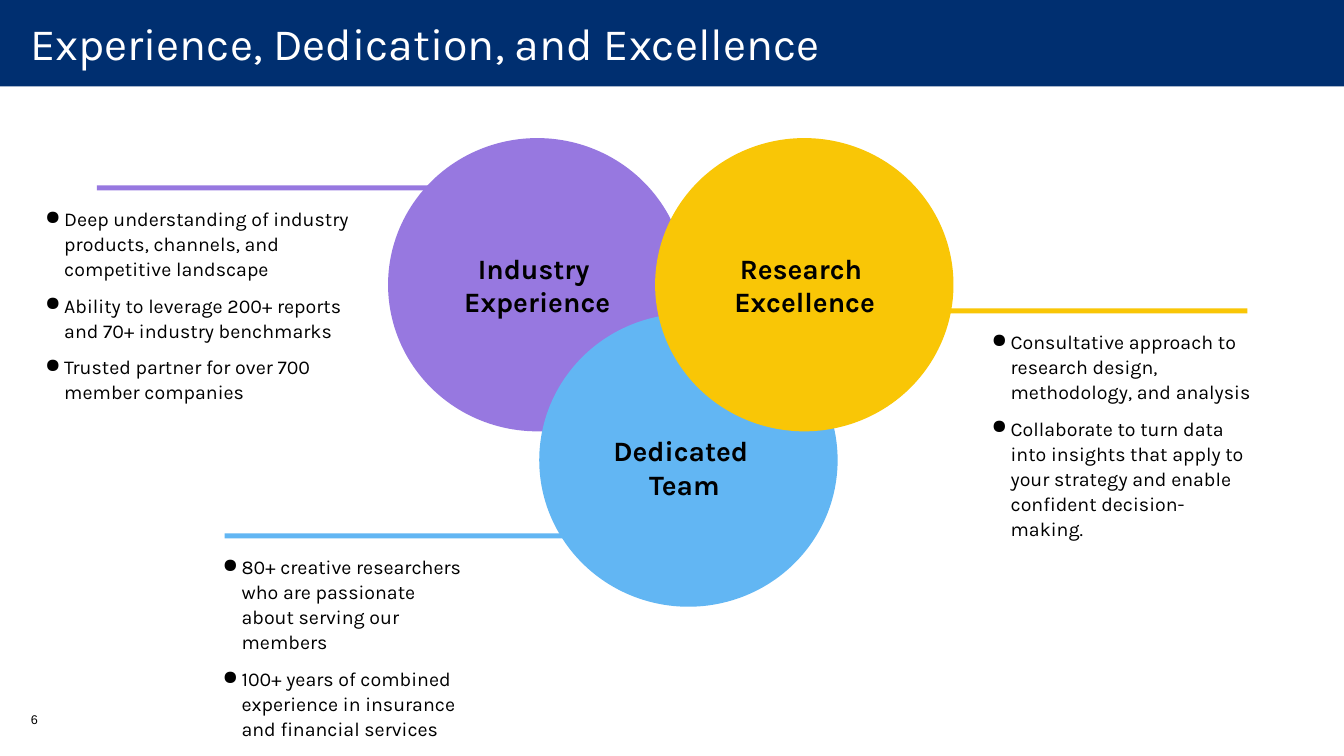
"""Build the slide on experience, dedication and excellence."""
from lxml.etree import SubElement
from pptx import Presentation
from pptx.dml.color import RGBColor
from pptx.enum.shapes import MSO_SHAPE
from pptx.enum.text import MSO_ANCHOR, PP_ALIGN
from pptx.oxml.ns import qn
from pptx.util import Cm, Pt

COLORS = {
    "navy": "002F70",
    "purple": "9778E0",
    "blue": "62B6F3",
    "yellow": "F9C606",
    "white": "FFFFFF",
    "black": "000000",
}
TITLE = "Experience, Dedication, and Excellence"
PAGE_NUMBER = "6"
THEMES = [
    {
        "color": "purple",
        "circle": (9.78, 3.48),
        "label": "Industry \vExperience",
        "label_center": (13.54, 7.18),
        "bar": (2.44, 4.67, 8.36),
        "column": (0.89, 8.36, 6.15),
        "points": [
            "Deep understanding of industry products, channels, and competitive landscape",
            "Ability to leverage 200+ reports and 70+ industry benchmarks",
            "Trusted partner for over 700 member companies",
        ],
    },
    {
        "color": "blue",
        "circle": (13.59, 7.9),
        "label": "Dedicated \vTeam",
        "label_center": (17.25, 11.78),
        "bar": (5.66, 13.44, 9.65),
        "column": (5.36, 6.53, 4.19),
        "points": [
            "80+ creative researchers who are passionate about serving our members",
            "100+ years of combined experience in insurance and financial services",
        ],
    },
    {
        "color": "yellow",
        "circle": (16.51, 3.48),
        "label": "Research \vExcellence",
        "label_center": (20.28, 7.18),
        "bar": (22.45, 7.77, 8.99),
        "column": (24.74, 7.09, 3.76),
        "points": [
            "Consultative approach to research design, methodology, and analysis",
            "Collaborate to turn data into insights that apply to your strategy "
            "and enable confident decision-making.",
        ],
    },
]
SLIDE_WIDTH, SLIDE_HEIGHT = 33.87, 19.05
CIRCLE_SIZE = (7.52, 7.39)
LABEL_SIZE = (5.2, 1.96)
BAR_HEIGHT = 0.13
COLUMN_DROP = 0.37
BULLET_INDENT = 0.48


def rgb(color):
    """Return the named colour."""
    return RGBColor.from_string(COLORS[color])


def add_filled(slide, preset, box, color):
    """Add a plain filled shape without outline or shadow."""
    shape = slide.shapes.add_shape(preset, *map(Cm, box))
    shape.shadow.inherit = False
    shape.fill.solid()
    shape.fill.fore_color.rgb = rgb(color)
    shape.line.fill.background()


def add_bullet(paragraph):
    """Give the paragraph a hanging round bullet."""
    properties = paragraph._p.get_or_add_pPr()
    properties.set("marL", str(Cm(BULLET_INDENT)))
    properties.set("indent", str(-Cm(BULLET_INDENT)))
    bullet_color = SubElement(properties, qn("a:buClr"))
    SubElement(bullet_color, qn("a:srgbClr"), val=COLORS["black"])
    SubElement(properties, qn("a:buChar"), char="●")


def add_text(slide, box, paragraphs, size=14, font="Karla", color="black", bold=False,
             align=PP_ALIGN.LEFT, anchor=MSO_ANCHOR.TOP, margins=(0.25, 0.13), bulleted=False):
    """Add a wrapped text box with one format for all its paragraphs."""
    frame = slide.shapes.add_textbox(*map(Cm, box)).text_frame
    frame.word_wrap = True
    frame.vertical_anchor = anchor
    frame.margin_left = frame.margin_right = Cm(margins[0])
    frame.margin_top = frame.margin_bottom = Cm(margins[1])
    for index, text in enumerate(paragraphs):
        paragraph = frame.add_paragraph() if index else frame.paragraphs[0]
        paragraph.text = text
        paragraph.alignment = align
        if bulleted:
            add_bullet(paragraph)
            paragraph.line_spacing = 1.07
            paragraph.space_before = Pt(4 if index else 0)
            paragraph.space_after = Pt(4)
        for run in paragraph.runs:
            run.font.size = Pt(size)
            run.font.name = font
            run.font.bold = bold
            run.font.color.rgb = rgb(color)


def main():
    """Lay out the slide and save it."""
    deck = Presentation()
    deck.slide_width, deck.slide_height = Cm(SLIDE_WIDTH), Cm(SLIDE_HEIGHT)
    slide = deck.slides.add_slide(deck.slide_layouts[6])

    add_filled(slide, MSO_SHAPE.RECTANGLE, (0, 0, SLIDE_WIDTH, 2.18), "navy")
    add_text(slide, (0, 0, SLIDE_WIDTH, 2.13), [TITLE], size=32, color="white",
             anchor=MSO_ANCHOR.MIDDLE, margins=(0.76, 0))
    add_text(slide, (0.53, 17.81, 1.24, 1.02), [PAGE_NUMBER], size=9, font="Arial")

    for theme in THEMES:
        add_filled(slide, MSO_SHAPE.OVAL, theme["circle"] + CIRCLE_SIZE, theme["color"])

    for theme in THEMES:
        center_x, center_y = theme["label_center"]
        width, height = LABEL_SIZE
        add_text(slide, (center_x - width / 2, center_y - height / 2, width, height),
                 [theme["label"]], size=20, bold=True, align=PP_ALIGN.CENTER)

        bar_left, bar_top, bar_width = theme["bar"]
        add_filled(slide, MSO_SHAPE.RECTANGLE, (bar_left, bar_top, bar_width, BAR_HEIGHT),
                   theme["color"])

        left, width, height = theme["column"]
        add_text(slide, (left, bar_top + COLUMN_DROP, width, height), theme["points"],
                 bulleted=True)

    deck.save("out.pptx")


if __name__ == "__main__":
    main()
